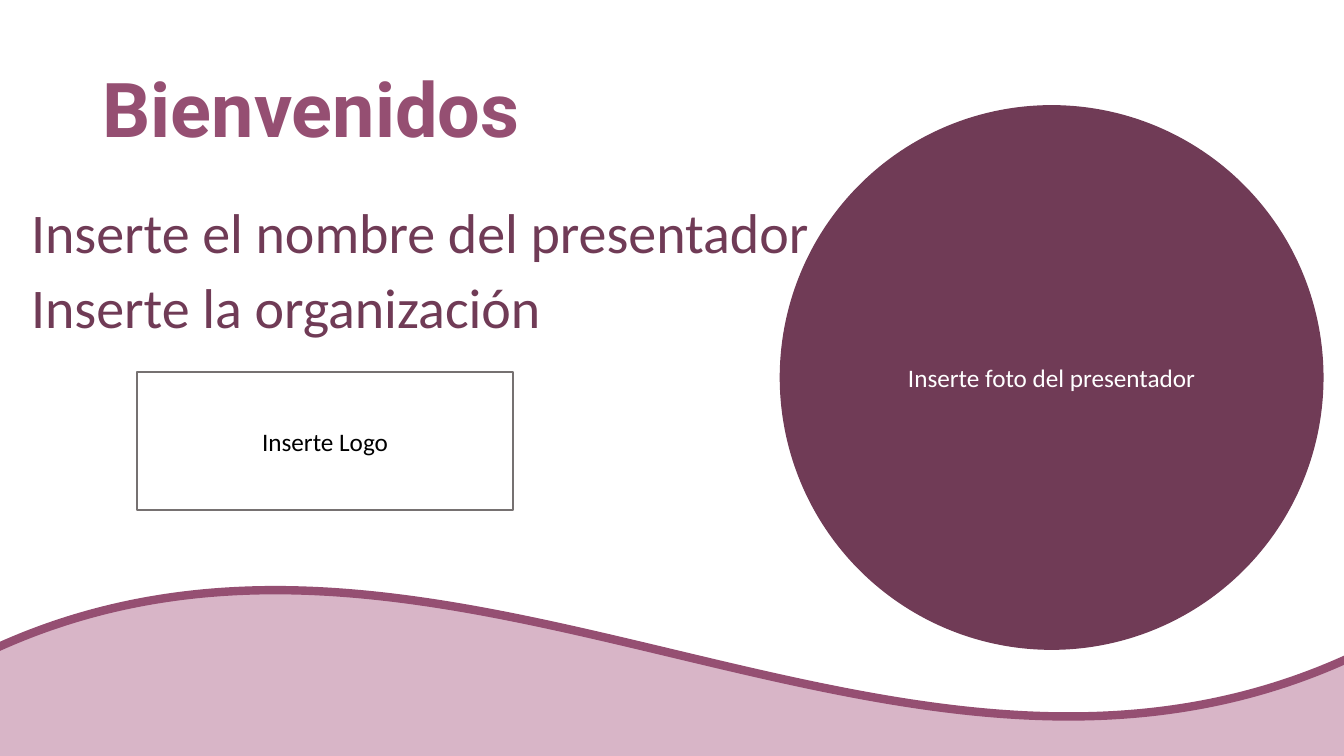
import pptx
import pptx.util
import pptx.dml.color
import pptx.enum.shapes
import pptx.enum.text

Inches, Pt = pptx.util.Inches, pptx.util.Pt
SHAPE = pptx.enum.shapes.MSO_SHAPE
ANCHOR = pptx.enum.text.MSO_ANCHOR
ALIGN = pptx.enum.text.PP_ALIGN

COLORS = {
    "plum": "703B56",
    "mauve": "954F72",
    "pink": "D8B5C7",
    "gray": "767171",
    "white": "FFFFFF",
    "black": "000000",
}


def rgb(name):
    return pptx.dml.color.RGBColor.from_string(COLORS[name])


def write(tf, lines, size, color, font="Calibri", bold=False, align=ALIGN.LEFT,
          anchor=ANCHOR.MIDDLE, spacing=1.0, gap=0):
    tf.word_wrap = True
    tf.vertical_anchor = anchor
    for i, line in enumerate(lines):
        p = tf.paragraphs[0] if i == 0 else tf.add_paragraph()
        p.text = line
        p.alignment = align
        p.line_spacing = spacing
        p.space_before = Pt(gap if i else 0)
        p.font.name = font
        p.font.size = Pt(size)
        p.font.bold = bold
        p.font.color.rgb = rgb(color)


def add_filled(s, kind, box, fill, line, width):
    sp = s.shapes.add_shape(kind, *map(Inches, box))
    sp.shadow.inherit = False
    sp.fill.solid()
    sp.fill.fore_color.rgb = rgb(fill)
    sp.line.color.rgb = rgb(line)
    sp.line.width = Pt(width)
    return sp


def add_wave(s, box):
    add_filled(s, SHAPE.WAVE, box, "pink", "mauve", 6)


def add_title(s, box, text):
    tf = s.shapes.add_textbox(*map(Inches, box)).text_frame
    write(tf, [text], 54, "mauve", font="Roboto", bold=True, spacing=0.9)


def add_presenter(s, box, lines):
    tf = s.shapes.add_textbox(*map(Inches, box)).text_frame
    write(tf, lines, 40, "plum", anchor=ANCHOR.TOP, spacing=0.9, gap=10)


def add_photo_circle(s, box, text):
    sp = add_filled(s, SHAPE.OVAL, box, "plum", "plum", 1)
    write(sp.text_frame, [text], 18, "white", align=ALIGN.CENTER)


def add_logo_frame(s, box, text):
    sp = add_filled(s, SHAPE.RECTANGLE, box, "white", "gray", 1)
    write(sp.text_frame, [text], 18, "black", align=ALIGN.CENTER)


def main():
    prs = pptx.Presentation()
    prs.slide_width, prs.slide_height = Inches(13.33), Inches(7.5)
    s = prs.slides.add_slide(prs.slide_layouts[6])

    # Wave along the bottom edge
    add_wave(s, (-0.15, 5.83, 13.63, 5.21))

    # Welcome heading and presenter details
    add_title(s, (0.92, 0.4, 11.5, 1.45), "Bienvenidos")
    add_presenter(s, (0.21, 1.99, 11.5, 4.76),
                  ["Inserte el nombre del presentador", "Inserte la organización"])

    # Places for the photo and the logo
    add_photo_circle(s, (7.74, 1.05, 5.38, 5.39), "Inserte foto del presentador")
    add_logo_frame(s, (1.36, 3.69, 3.73, 1.37), "Inserte Logo")

    prs.save("out.pptx")


if __name__ == "__main__":
    main()
